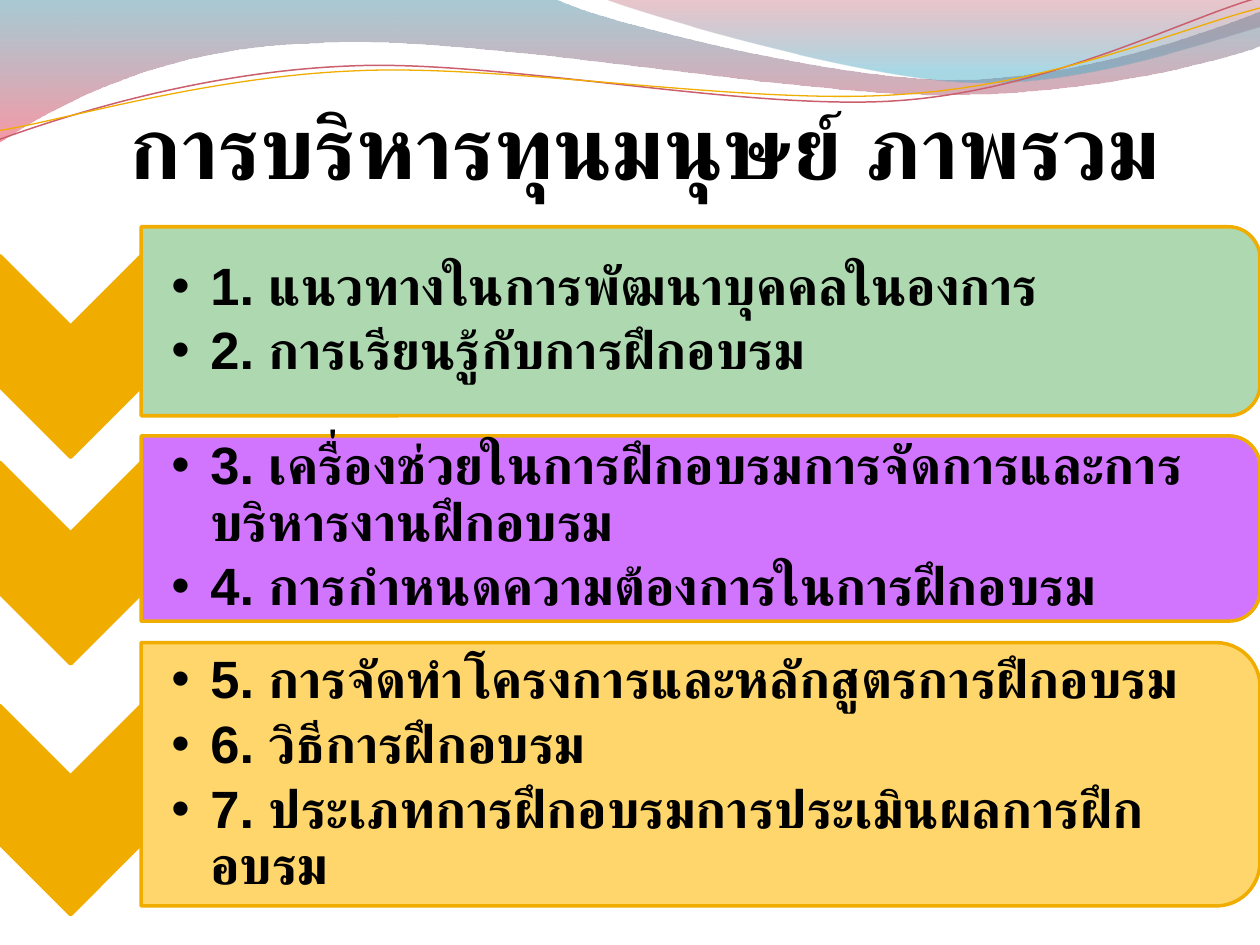
from lxml import etree
from pptx import Presentation
from pptx.dml.color import RGBColor
from pptx.enum.shapes import MSO_SHAPE
from pptx.enum.text import MSO_ANCHOR, PP_ALIGN
from pptx.oxml.ns import qn
from pptx.util import Inches, Pt

CHEVRON, CARD = MSO_SHAPE.CHEVRON, MSO_SHAPE.ROUND_2_SAME_RECTANGLE
MIDDLE, BOTTOM = MSO_ANCHOR.MIDDLE, MSO_ANCHOR.BOTTOM
CENTER = PP_ALIGN.CENTER
BLACK = RGBColor(0x00, 0x00, 0x00)
GOLD = RGBColor(0xF0, 0xAD, 0x00)
ROSE = RGBColor(0xCB, 0x5F, 0x6E)
TEAL = RGBColor(0x3F, 0x8A, 0x9F)
PINK = RGBColor(0xEF, 0x44, 0x5B)
WINE = RGBColor(0xB8, 0x42, 0x53)
AQUA = RGBColor(0x42, 0xAB, 0xC7)
GREEN = RGBColor(0xA6, 0xD4, 0xA7)
VIOLET = RGBColor(0xCC, 0x66, 0xFF)
AMBER = RGBColor(0xFF, 0xD2, 0x5D)
FONT = "Arial"
TILT = 357.3

prs = Presentation()
prs.slide_width, prs.slide_height = Inches(10), Inches(7.5)
slide = prs.slides.add_slide(prs.slide_layouts[6])
shapes = slide.shapes


def fade(shape, *alphas):
    """Set the opacity, in percent, of each fill colour in turn."""
    for node, alpha in zip(shape._element.spPr.iter(qn("a:srgbClr")), alphas):
        etree.SubElement(node, qn("a:alpha")).set("val", str(alpha * 1000))


def write(frame, lines, size, anchor, insets):
    frame.word_wrap = True
    frame.vertical_anchor = anchor
    (frame.margin_left, frame.margin_top,
     frame.margin_right, frame.margin_bottom) = map(Inches, insets)
    frame.text = "\n".join(lines)
    for para in frame.paragraphs:
        font = para.runs[0].font
        font.name, font.size, font.bold = FONT, Pt(size), True
        font.color.rgb = BLACK
        etree.SubElement(font._element, qn("a:cs")).set("typeface", FONT)


# Waves along the top: start, then lines (2 numbers) and Bezier curves (6)
waves = [
    ([(0, 0), (4.4, -0.01), (4.76, 0.17, 6.64, 0.63, 7.58, 0.63),
      (8.53, 0.63, 9.58, 0.26, 10, 0.09), (10.01, 0.36),
      (9.83, 0.44, 8.7, 0.76, 7.46, 0.75),
      (6.22, 0.75, 3.82, 0.28, 2.57, 0.34),
      (1.29, 0.36, 0.46, 0.83, -0.01, 1.13)],
     [(0, TEAL, 45), (1, PINK, 55)], None, 0),
    ([(4.79, -0.01), (5.09, 0.11, 6.82, 0.62, 7.69, 0.65),
      (8.56, 0.69, 9.61, 0.32, 10, 0.21), (10, 0)],
     [(0, WINE, 30), (0.8, AQUA, 45)], None, 0),
    ([(-0.02, 0.87), (0.47, 0.72, 1.58, 0.41, 2.78, 0.42),
      (3.96, 0.42, 5.91, 0.93, 7.12, 0.9),
      (8.32, 0.87, 9.4, 0.36, 10, 0.22)], None, ROSE, 0.85),
    ([(-0.02, 0.8), (0.46, 0.75, 1.64, 0.45, 2.83, 0.46),
      (4.03, 0.46, 5.96, 0.89, 7.16, 0.85),
      (8.35, 0.83, 9.42, 0.42, 10.02, 0.3)], None, GOLD, 0.75),
]
for parts, stops, color, width in waves:
    points = [(Inches(part[i]), Inches(part[i + 1]))
              for part in parts for i in range(0, len(part), 2)]
    pen = shapes.build_freeform(*points[0])
    pen.add_line_segments(points[1:], close=bool(stops))
    wave = pen.convert_to_shape()
    # Join each three segments of a curve into one Bezier segment
    segments = iter(list(wave._element.iter(qn("a:lnTo"))))
    for part in parts[1:]:
        first = next(segments)
        if len(part) == 6:
            first.tag = qn("a:cubicBezTo")
            for _ in range(2):
                spare = next(segments)
                first.append(spare[0])
                spare.getparent().remove(spare)
    wave.shadow.inherit = False
    if stops:
        wave.fill.gradient()
        wave.fill.gradient_angle = 270
        for stop, (place, tint, _) in zip(wave.fill.gradient_stops, stops):
            stop.position, stop.color.rgb = place, tint
        fade(wave, *(alpha for _, _, alpha in stops))
        wave.line.fill.background()
    else:
        wave.rotation = TILT
        wave.fill.background()
        wave.line.color.rgb, wave.line.width = color, Pt(width)

title = shapes.add_textbox(Inches(0.62), Inches(0.31), Inches(9), Inches(1.25))
write(title.text_frame, ["การบริหารทุนมนุษย์ ภาพรวม"], 50, BOTTOM, (0, 0.05, 0, 0))
title.text_frame.paragraphs[0].alignment = CENTER

# Each row: chevron top and height, card top and height, text top and height,
# card colour, lines
rows = [
    (2.03, 1.6, 1.8, 1.5, 1.87, 1.35, GREEN,
     ["1. แนวทางในการพัฒนาบุคคลในองการ", "2. การเรียนรู้กับการฝึกอบรม"]),
    (3.67, 1.6, 3.46, 1.47, 3.53, 1.32, VIOLET,
     ["3. เครื่องช่วยในการฝึกอบรมการจัดการและการบริหารงานฝึกอบรม",
      "4. การกำหนดความต้องการในการฝึกอบรม"]),
    (5.6, 1.66, 5.1, 2.09, 5.21, 1.88, AMBER,
     ["5. การจัดทำโครงการและหลักสูตรการฝึกอบรม", "6. วิธีการฝึกอบรม",
      "7. ประเภทการฝึกอบรมการประเมินผลการฝึกอบรม"]),
]
EDGE, WIDE = 1.12, 8.88
for tip, tall, top, high, start, deep, color, lines in rows:
    for kind, left, y, w, h, fill, alpha in (
            (CHEVRON, 0, tip, EDGE, tall, GOLD, 100),
            (CARD, EDGE, top, WIDE, high, color, 90)):
        # A quarter turn swaps width and height around the centre
        shape = shapes.add_shape(kind, Inches(left + (w - h) / 2),
                                 Inches(y + (h - w) / 2), Inches(h), Inches(w))
        shape.rotation = 90
        shape.shadow.inherit = False
        shape.fill.solid()
        shape.fill.fore_color.rgb = fill
        if alpha < 100:
            fade(shape, alpha)
        shape.line.color.rgb, shape.line.width = GOLD, Pt(2)

    box = shapes.add_textbox(Inches(EDGE), Inches(start),
                             Inches(8.8), Inches(deep))
    write(box.text_frame, lines, 30, MIDDLE, (0.24, 0.02, 0.02, 0.02))
    for para in box.text_frame.paragraphs:
        para.level = 1
        para.line_spacing, para.space_after = 0.9, Pt(4.5)
        props = para._p.get_or_add_pPr()
        props.set("marL", str(Inches(0.31)))
        props.set("indent", str(-Inches(0.31)))
        etree.SubElement(props, qn("a:buFont")).set("typeface", FONT)
        etree.SubElement(props, qn("a:buChar")).set("char", "•")

prs.save("out.pptx")
